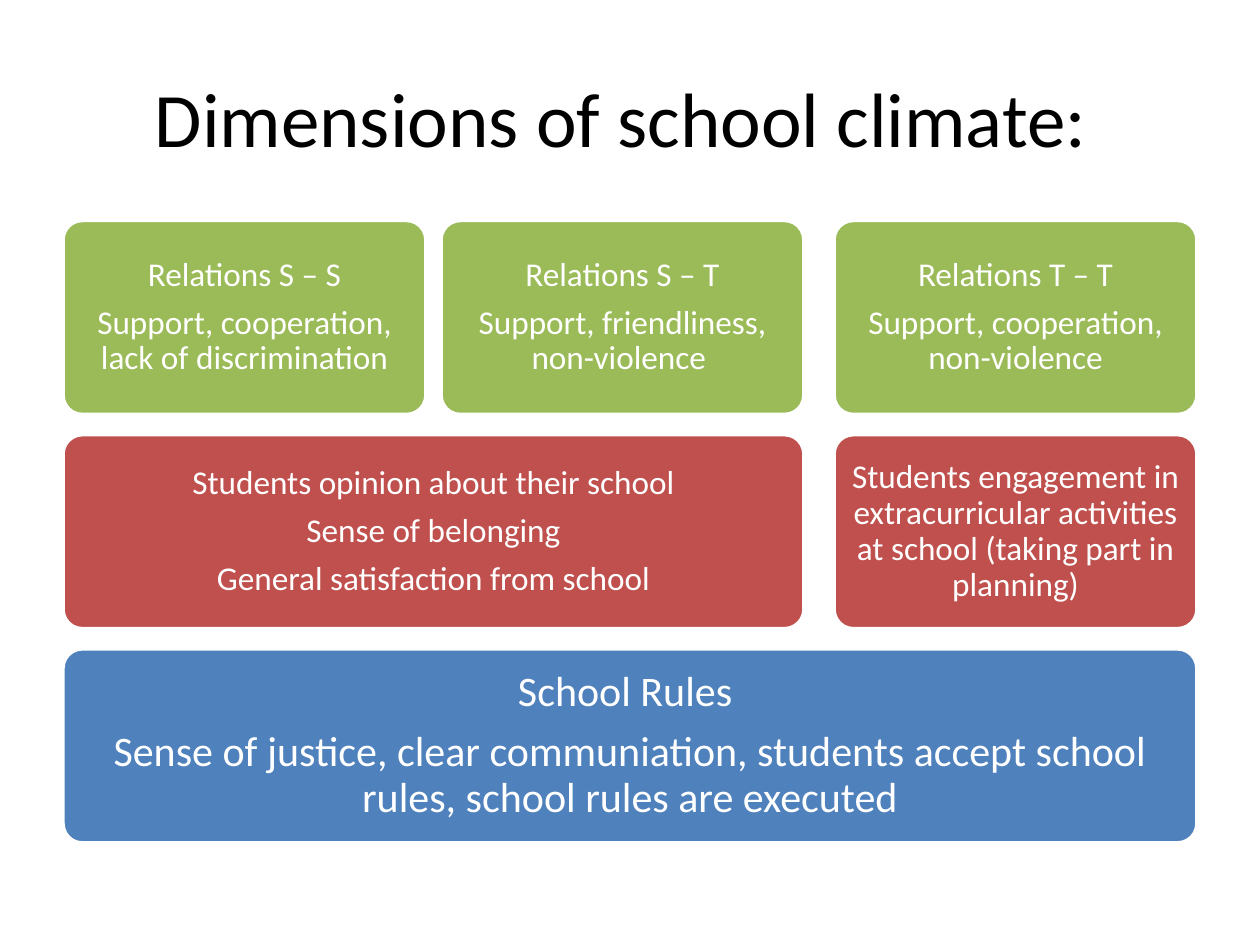
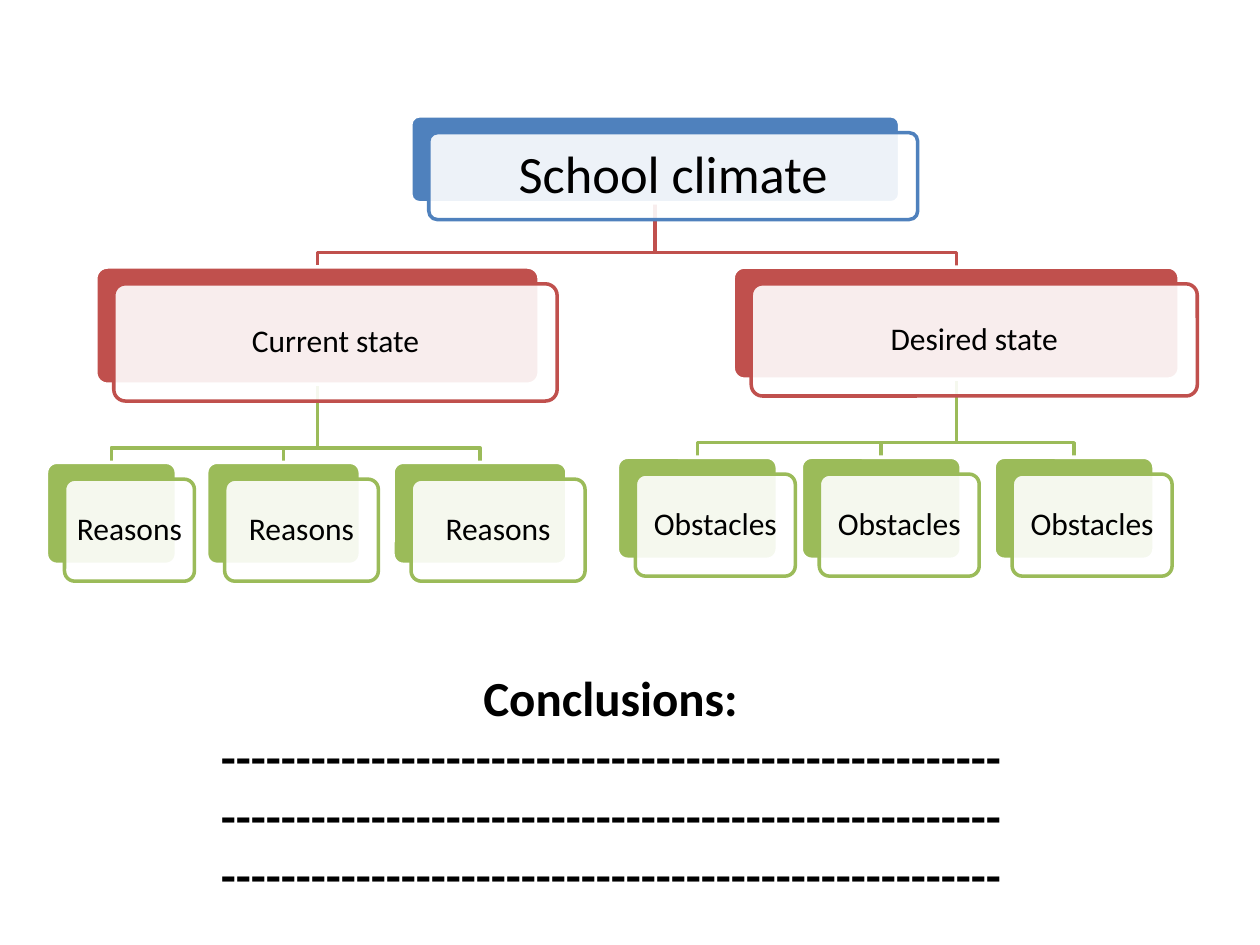
"""Build two slides on school climate: its dimensions and a planning tree."""
from lxml import etree
from pptx import Presentation
from pptx.dml.color import RGBColor
from pptx.enum.shapes import MSO_SHAPE
from pptx.enum.text import MSO_ANCHOR, PP_ALIGN
from pptx.oxml.ns import qn
from pptx.util import Pt

ROUNDED = MSO_SHAPE.ROUNDED_RECTANGLE
MIDDLE = MSO_ANCHOR.MIDDLE
CENTER = PP_ALIGN.CENTER

FONT = "Calibri"
WHITE, BLACK = "FFFFFF", "000000"
BLUE, RED, GREEN = "4F81BD", "C0504D", "9BBB59"

TITLE = "Dimensions of school climate: "
# row, first column, last column, colour, text size, paragraphs
DIMENSIONS = [
    (2, 0, 2, BLUE, 24, [
        "School Rules ",
        "Sense of justice, clear communiation, students accept school rules, "
        "school rules are executed"]),
    (1, 0, 1, RED, 19, [
        "Students opinion about their school",
        "Sense of belonging",
        "General satisfaction from school"]),
    (0, 0, 0, GREEN, 19, [
        "Relations S – S", "Support, cooperation, lack of discrimination"]),
    (0, 1, 1, GREEN, 19, [
        "Relations S – T", "Support, friendliness, non-violence "]),
    (1, 2, 2, RED, 19, [
        "Students engagement in extracurricular activities at school "
        "(taking part in planning)"]),
    (0, 2, 2, GREEN, 19, [
        "Relations T – T", "Support, cooperation, non-violence"]),
]
COLUMN_LEFTS = (36, 252, 476.6)
COLUMN_WIDTH = 207.4
ROW_TOP, ROW_PITCH, ROW_HEIGHT = 126, 122.4, 110.9

# label, left, width, height, children
TREE = ("School climate", 234.7, 279.4, 49.7, [
    ("Current state", 54.7, 253.4, 67, [
        ("Reasons", 26.6, 74.2, 58.3, []),
        ("Reasons", 118.1, 87.8, 58.3, []),
        ("Reasons", 224.6, 99.4, 58.3, []),
    ]),
    ("Desired state", 419, 254.9, 64.1, [
        ("Obstacles", 352.8, 91.4, 58.3, []),
        ("Obstacles", 457.9, 91.4, 58.3, []),
        ("Obstacles", 568.1, 91.4, 58.3, []),
    ]),
])
TREE_TOP = 66.2
LEVEL_COLORS = (BLUE, RED, GREEN)
LEVEL_SIZES = (30, 18, 18)
LEVEL_GAPS = (36.7, 44.6)
BEND_ABOVE_CHILD = 8.3
FRONT_SHIFT = (10.3, 9.6)

CONCLUSIONS = ["Conclusions:"] + ["-" * 52] * 3


def color(hex_value):
    return RGBColor.from_string(hex_value)


def write(frame, paragraphs, size, hex_value, bold=False, tight=False):
    """Fill a text frame with centred paragraphs."""
    frame.word_wrap = True
    for index, text in enumerate(paragraphs):
        paragraph = frame.add_paragraph() if index else frame.paragraphs[0]
        paragraph.alignment = CENTER
        if tight:
            paragraph.line_spacing = 0.9
            paragraph.space_after = Pt(size * 0.35)
        run = paragraph.add_run()
        run.text = text
        run.font.name = FONT
        run.font.size = Pt(size)
        run.font.bold = bold
        run.font.color.rgb = color(hex_value)


def outline(shape, hex_value):
    shape.shadow.inherit = False
    shape.line.color.rgb = color(hex_value)
    shape.line.width = Pt(2)


def add_box(slide, left, top, width, height, fill, line):
    """Add a rounded box with a plain fill and outline."""
    box = slide.shapes.add_shape(ROUNDED, Pt(left), Pt(top), Pt(width), Pt(height))
    box.adjustments[0] = 0.1
    box.fill.solid()
    box.fill.fore_color.rgb = color(fill)
    outline(box, line)
    return box


def write_in_box(box, paragraphs, size, hex_value):
    """Write tight text in the middle of a box, with margins that suit its size."""
    frame = box.text_frame
    frame.vertical_anchor = MIDDLE
    margin = Pt(size * 0.28)
    frame.margin_left = frame.margin_right = margin
    frame.margin_top = frame.margin_bottom = margin
    write(frame, paragraphs, size, hex_value, tight=True)


def add_elbow(slide, start, end, hex_value):
    """Draw a bent line from a parent's bottom to a child's top."""
    bend = end[1] - BEND_ABOVE_CHILD
    points = [(Pt(x), Pt(y)) for x, y in (start, (start[0], bend), (end[0], bend), end)]
    builder = slide.shapes.build_freeform(*points[0])
    builder.add_line_segments(points[1:], close=False)
    elbow = builder.convert_to_shape()
    elbow.fill.background()
    outline(elbow, hex_value)


def add_elbows(slide, node, top, level=0):
    """Draw the lines below a node, the deepest first."""
    _, left, width, height, children = node
    bottom = top + height
    for child in children:
        child_top = bottom + LEVEL_GAPS[level]
        add_elbows(slide, child, child_top, level + 1)
        add_elbow(slide, (left + width / 2, bottom),
                  (child[1] + child[2] / 2, child_top), LEVEL_COLORS[level + 1])


def add_nodes(slide, node, top, level=0):
    """Draw a node as a coloured back and a translucent front, then its children."""
    label, left, width, height, children = node
    tint = LEVEL_COLORS[level]
    add_box(slide, left, top, width, height, tint, WHITE)
    front = add_box(slide, left + FRONT_SHIFT[0], top + FRONT_SHIFT[1],
                    width, height, WHITE, tint)
    fill_color = front.fill._xPr.find(qn("a:solidFill"))[0]
    etree.SubElement(fill_color, qn("a:alpha"), val="90000")
    write_in_box(front, [label], LEVEL_SIZES[level], BLACK)
    for child in children:
        add_nodes(slide, child, top + height + LEVEL_GAPS[level], level + 1)


def build_dimensions(presentation):
    slide = presentation.slides.add_slide(presentation.slide_layouts[5])
    title = slide.shapes.title
    title.left, title.top, title.width, title.height = map(Pt, (36, 21.6, 648, 90))
    title.text_frame.vertical_anchor = MIDDLE
    write(title.text_frame, [TITLE], 44, BLACK)
    for row, first, last, tint, size, paragraphs in DIMENSIONS:
        left = COLUMN_LEFTS[first]
        width = COLUMN_LEFTS[last] + COLUMN_WIDTH - left
        box = add_box(slide, left, ROW_TOP + row * ROW_PITCH, width, ROW_HEIGHT,
                      tint, WHITE)
        write_in_box(box, paragraphs, size, WHITE)


def build_tree(presentation):
    slide = presentation.slides.add_slide(presentation.slide_layouts[6])
    add_elbows(slide, TREE, TREE_TOP)
    add_nodes(slide, TREE, TREE_TOP)
    conclusions = slide.shapes.add_textbox(Pt(54), Pt(378), Pt(589.7), Pt(143.3))
    write(conclusions.text_frame, CONCLUSIONS, 28, BLACK, bold=True)


def main():
    presentation = Presentation()
    presentation.slide_width, presentation.slide_height = Pt(720), Pt(540)
    build_dimensions(presentation)
    build_tree(presentation)
    presentation.save("out.pptx")


if __name__ == "__main__":
    main()
